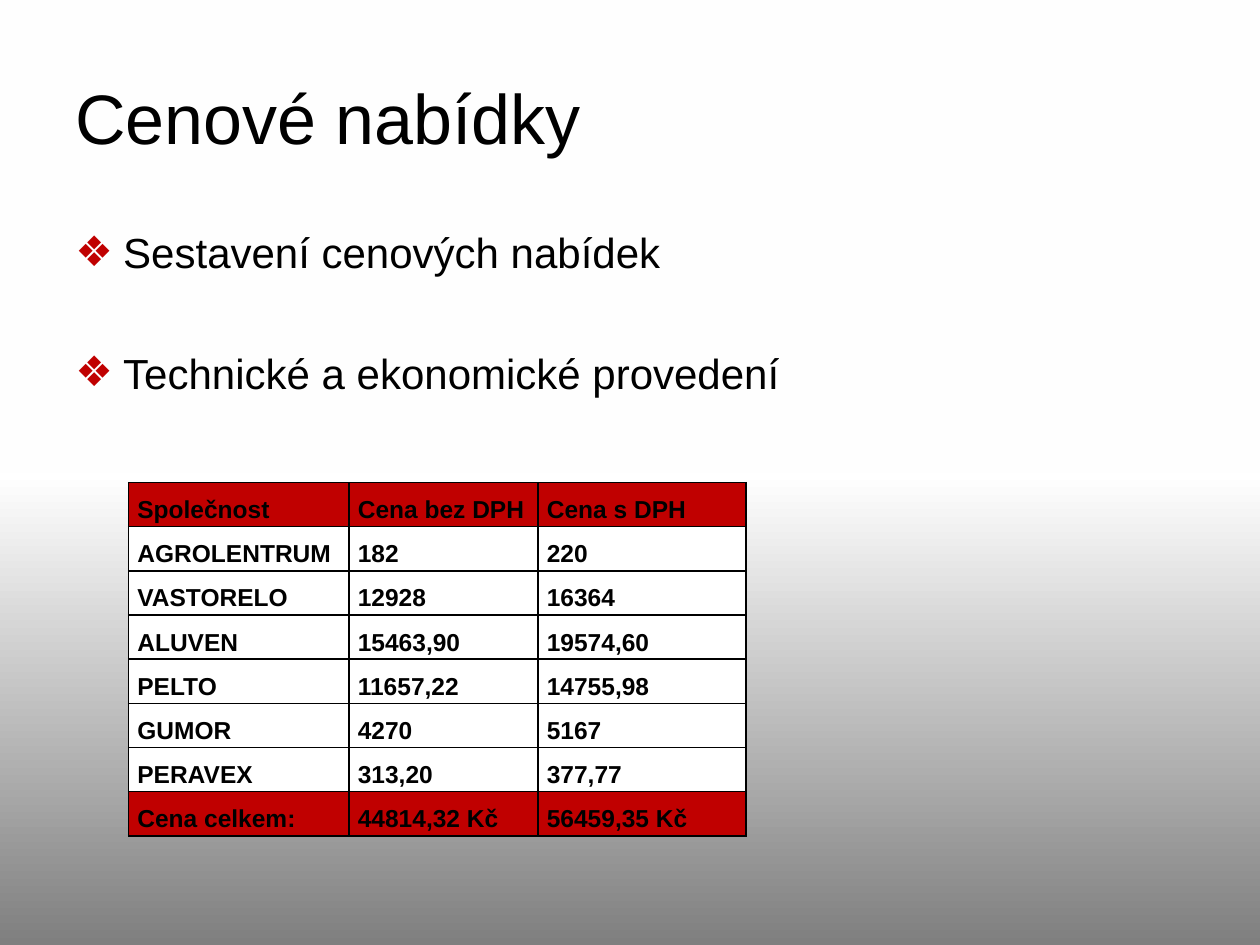
from dataclasses import dataclass

from lxml.etree import SubElement
from pptx import Presentation
from pptx.dml.color import RGBColor
from pptx.enum.text import MSO_ANCHOR
from pptx.oxml import parse_xml
from pptx.oxml.ns import nsdecls, qn
from pptx.util import Inches, Pt


@dataclass(frozen=True)
class Theme:
    font: str = "Arial"
    ink: str = "000000"
    red: str = "C00000"
    white: str = "FFFFFF"
    fade: tuple = ((40, "FEFEFE"), (50, "FFFFFF"), (100, "7F7F7F"))
    title: int = 40
    body: int = 24
    cell: int = 14


THEME = Theme()

POINTS = ["Sestavení cenových nabídek", "Technické a ekonomické provedení"]
COLS = [1.75, 1.5, 1.65]
ROW = 0.33
PRICES = [
    ("Společnost", "Cena bez DPH", "Cena s DPH"),
    ("AGROLENTRUM", "182", "220"),
    ("VASTORELO", "12928", "16364"),
    ("ALUVEN", "15463,90", "19574,60"),
    ("PELTO", "11657,22", "14755,98"),
    ("GUMOR", "4270", "5167"),
    ("PERAVEX", "313,20", "377,77"),
    ("Cena celkem:", "44814,32 Kč", "56459,35 Kč"),
]


def add_fade(slide):
    stops = "".join(
        f'<a:gs pos="{pos * 1000}"><a:srgbClr val="{color}"/></a:gs>'
        for pos, color in THEME.fade)
    slide.element.cSld.insert(0, parse_xml(
        f'<p:bg {nsdecls("p", "a")}><p:bgPr><a:gradFill rotWithShape="1">'
        f'<a:gsLst>{stops}</a:gsLst><a:lin ang="5400000" scaled="0"/>'
        '</a:gradFill><a:effectLst/></p:bgPr></p:bg>'))


def add_bullet(para, mark="❖", indent=0.38):
    props = para._p.get_or_add_pPr()
    props.set("marL", str(Inches(indent)))
    props.set("indent", str(Inches(-indent)))
    color = SubElement(props, qn("a:buClr"))
    SubElement(color, qn("a:srgbClr"), val=THEME.red)
    SubElement(props, qn("a:buFont"), typeface=THEME.font)
    SubElement(props, qn("a:buChar"), char=mark)


def put_text(frame, *lines, size, bold=False, bullet=False, gap=0, pitch=None):
    """Fill a frame with one paragraph per line."""
    frame.word_wrap = True
    for i, line in enumerate(lines):
        para = frame.add_paragraph() if i else frame.paragraphs[0]
        if i and gap:
            para.space_before = Pt(gap)
        if pitch:
            para.line_spacing = pitch
        if bullet:
            add_bullet(para)
        run = para.add_run()
        run.text = line
        font = run.font
        font.name, font.size, font.bold = THEME.font, Pt(size), bold
        font.color.rgb = RGBColor.from_string(THEME.ink)


def add_box(slide, left, top, width, height, anchor=MSO_ANCHOR.TOP):
    box = slide.shapes.add_textbox(
        Inches(left), Inches(top), Inches(width), Inches(height))
    box.text_frame.vertical_anchor = anchor
    return box.text_frame


def style_cell(cell, fill):
    cell.margin_left = cell.margin_right = Inches(0.07)
    cell.margin_top = cell.margin_bottom = 0
    # Borders come before the fill in the cell properties
    props = cell._tc.get_or_add_tcPr()
    for side in "LRTB":
        line = SubElement(props, qn(f"a:ln{side}"), w=str(Pt(1)))
        solid = SubElement(line, qn("a:solidFill"))
        SubElement(solid, qn("a:srgbClr"), val=THEME.ink)
    cell.fill.solid()
    cell.fill.fore_color.rgb = RGBColor.from_string(fill)


def add_prices(slide, left, top):
    table = slide.shapes.add_table(
        len(PRICES), len(COLS), Inches(left), Inches(top),
        Inches(sum(COLS)), Inches(ROW * len(PRICES))).table
    table.first_row = table.horz_banding = False
    for col, width in zip(table.columns, COLS):
        col.width = Inches(width)
    for r, row in enumerate(PRICES):
        fill = THEME.red if r in (0, len(PRICES) - 1) else THEME.white
        for c, value in enumerate(row):
            cell = table.cell(r, c)
            style_cell(cell, fill)
            put_text(cell.text_frame, value,
                     size=THEME.cell, bold=True, pitch=1.5)


def main():
    deck = Presentation()
    deck.slide_width, deck.slide_height = Inches(10), Inches(7.5)
    slide = deck.slides.add_slide(deck.slide_layouts[6])
    add_fade(slide)

    # Title
    title = add_box(slide, 0.5, 0.3, 9, 1.25, MSO_ANCHOR.MIDDLE)
    put_text(title, "Cenové nabídky", size=THEME.title)

    # Bullet points
    body = add_box(slide, 0.5, 1.75, 9, 4.95)
    put_text(body, *POINTS, size=THEME.body, bullet=True, gap=40)

    # Price table
    add_prices(slide, 1.02, 3.83)

    deck.save("out.pptx")


if __name__ == "__main__":
    main()
